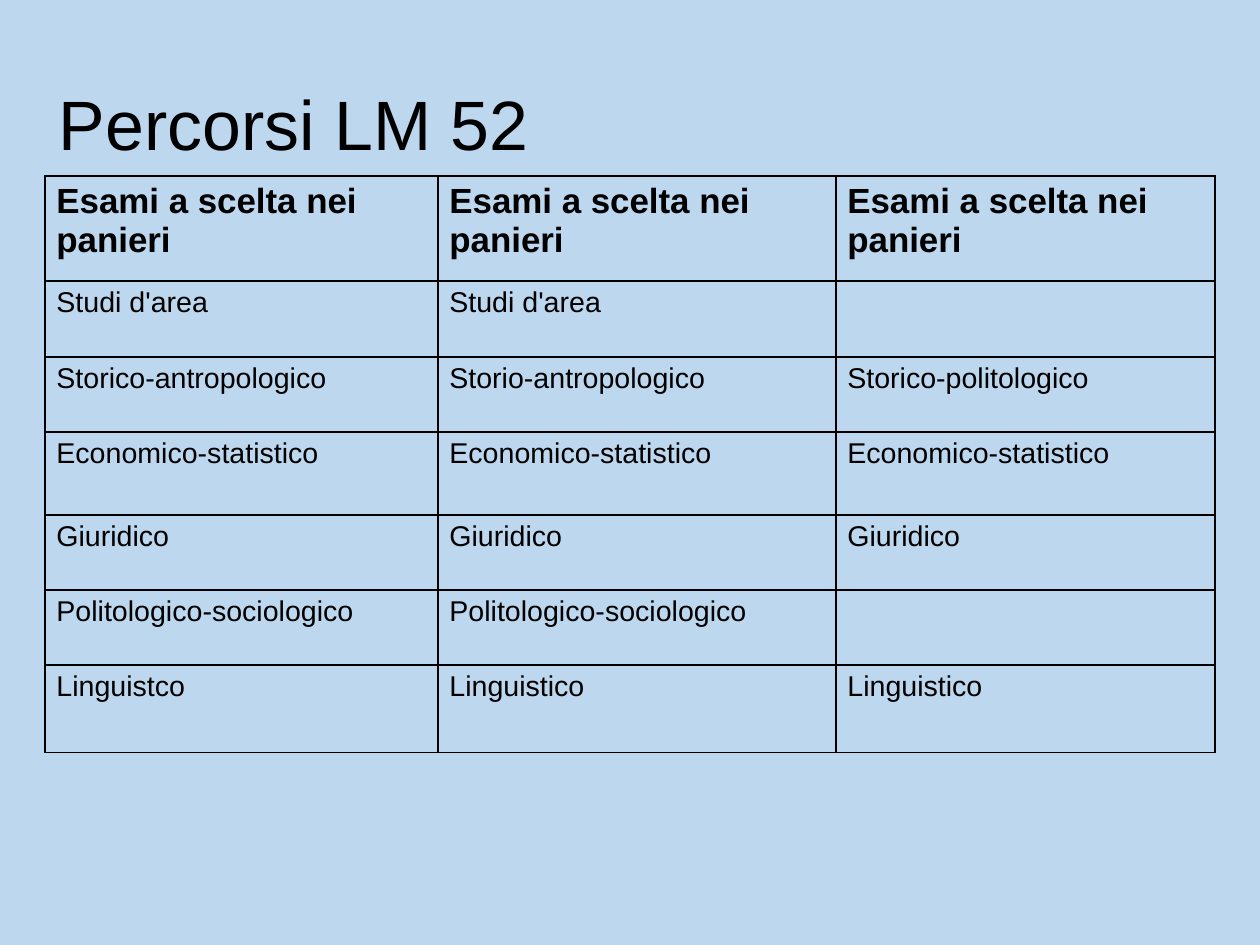
from lxml import etree
from pptx import Presentation
from pptx.dml.color import RGBColor
from pptx.enum import text
from pptx.oxml import ns
from pptx.util import Pt

TITLE = "Percorsi LM 52"
HEAD = "Esami a scelta nei panieri"
ROWS = [
    (HEAD, HEAD, HEAD),
    ("Studi d'area", "Studi d'area", ""),
    ("Storico-antropologico", "Storio-antropologico", "Storico-politologico"),
    ("Economico-statistico", "Economico-statistico", "Economico-statistico"),
    ("Giuridico", "Giuridico", "Giuridico"),
    ("Politologico-sociologico", "Politologico-sociologico", ""),
    ("Linguistco", "Linguistico", "Linguistico"),
]
WIDTHS = (393, 398, 379)
HEIGHTS = (105, 76, 75, 83, 75, 75, 88)
SKY = RGBColor(0xBD, 0xD7, 0xEE)
BLACK = RGBColor(0, 0, 0)
PX = 8000


def px(*nums):
    return [n * PX for n in nums]


def write(frame, words, size, bold=False):
    run = frame.paragraphs[0].add_run()
    run.text = words
    look = {"name": "Arial", "size": Pt(size), "bold": bold}
    for key, value in look.items():
        setattr(run.font, key, value)
    run.font.color.rgb = BLACK


def rule(cell):
    """Draw a thin line on all four sides of a cell."""
    props = cell._tc.get_or_add_tcPr()
    for at, side in enumerate(("lnL", "lnR", "lnT", "lnB")):
        line = etree.Element(ns.qn("a:" + side), w=str(Pt(1)))
        fill = etree.SubElement(line, ns.qn("a:solidFill"))
        etree.SubElement(fill, ns.qn("a:srgbClr"), val=str(BLACK))
        props.insert(at, line)


def main():
    deck = Presentation()
    deck.slide_width, deck.slide_height = px(1260, 945)
    slide = deck.slides.add_slide(deck.slide_layouts[6])
    slide.background.fill.solid()
    slide.background.fill.fore_color.rgb = SKY

    frame = slide.shapes.add_textbox(*px(59, 44, 1134, 158)).text_frame
    style = {"word_wrap": True, "vertical_anchor": text.MSO_ANCHOR.MIDDLE,
             "margin_left": 0, "margin_right": 0,
             "margin_top": 0, "margin_bottom": 0}
    for key, value in style.items():
        setattr(frame, key, value)
    write(frame, TITLE, 44)

    area = px(45, 176, sum(WIDTHS), sum(HEIGHTS))
    table = slide.shapes.add_table(len(ROWS), len(WIDTHS), *area).table
    table.first_row = table.horz_banding = False
    for col, width in zip(table.columns, px(*WIDTHS)):
        col.width = width
    for row, height in zip(table.rows, px(*HEIGHTS)):
        row.height = height
    for r, line in enumerate(ROWS):
        for c, words in enumerate(line):
            cell = table.cell(r, c)
            cell.fill.background()
            rule(cell)
            if words:
                write(cell.text_frame, words, 18 if r else 22, r == 0)

    deck.save("out.pptx")


if __name__ == "__main__":
    main()
